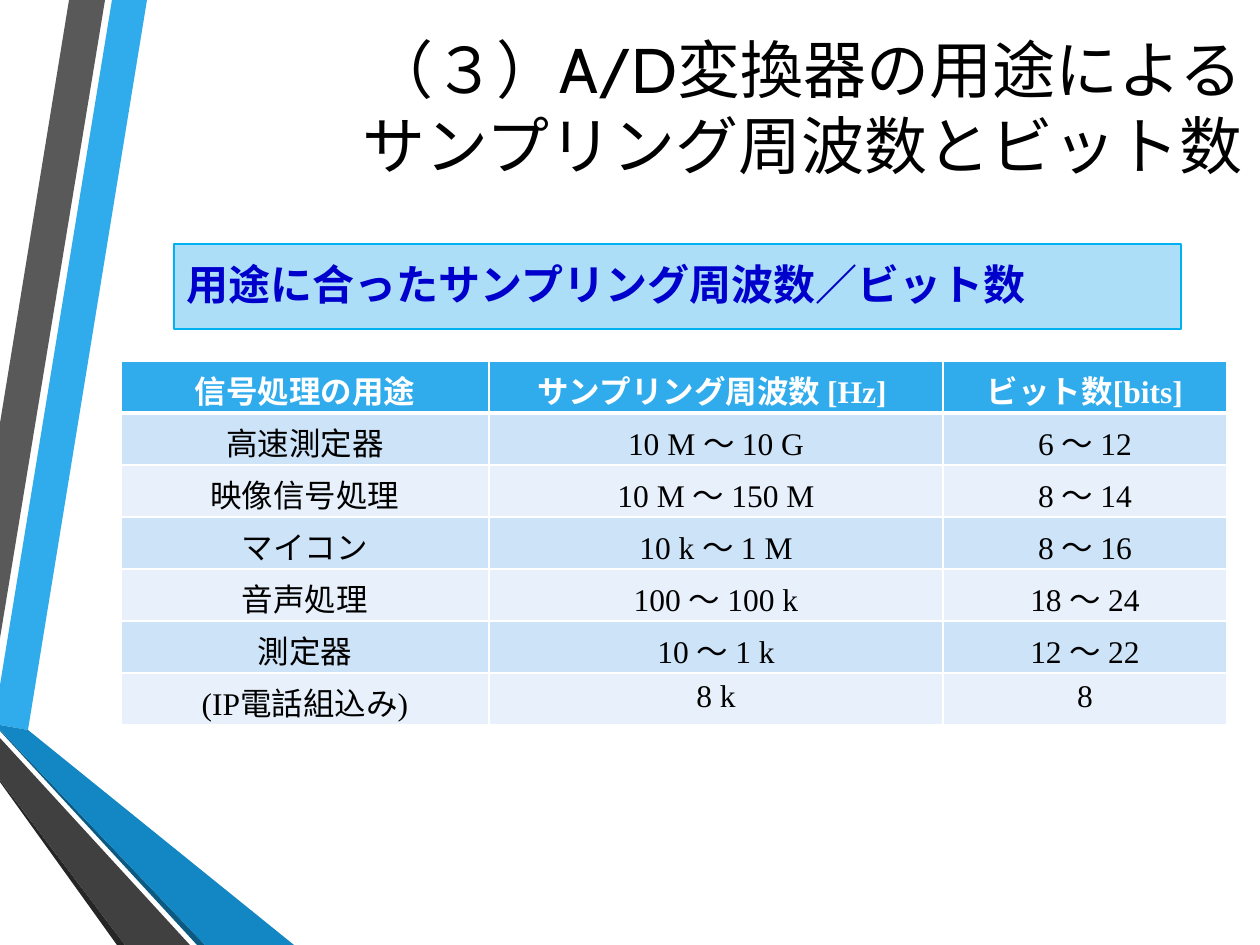
from dataclasses import dataclass

from lxml import etree
from pptx import Presentation
from pptx.dml.color import RGBColor
from pptx.enum.shapes import MSO_SHAPE
from pptx.enum.text import MSO_ANCHOR, PP_ALIGN
from pptx.oxml.ns import qn
from pptx.util import Emu, Pt

EMU_PER_PX = 914400 / 126
LEFT, CENTER, RIGHT = PP_ALIGN.LEFT, PP_ALIGN.CENTER, PP_ALIGN.RIGHT
TOP, MIDDLE = MSO_ANCHOR.TOP, MSO_ANCHOR.MIDDLE
RECTANGLE = MSO_SHAPE.RECTANGLE


@dataclass(frozen=True)
class Theme:
    title_font: str = "Cabin"
    body_font: str = "Times New Roman"
    title_size: int = 36
    banner_size: int = 24
    table_size: int = 18
    text: str = "000000"
    white: str = "FFFFFF"
    banner_text: str = "0000CC"
    banner_fill: str = "ACDEF7"
    banner_line: str = "00B0F0"
    accent: str = "30ACEC"
    accent_dark: str = "1287C3"
    accent_shadow: str = "0C5A82"
    gray: str = "595959"
    gray_dark: str = "404040"
    gray_shadow: str = "262626"
    row_fills: tuple = ("CDE3F8", "E8F1FB")


def px(length):
    return Emu(round(length * EMU_PER_PX))


def paint(fill, color):
    fill.solid()
    fill.fore_color.rgb = RGBColor.from_string(color)


def set_borders(cell, color, widths):
    """Draw the cell borders; widths maps left, right, top, bottom (L R T B) to points."""
    properties = cell._tc.get_or_add_tcPr()
    for index, side in enumerate("LRTB"):
        line = etree.Element(qn(f"a:ln{side}"), w=str(Pt(widths[side])))
        fill = etree.SubElement(line, qn("a:solidFill"))
        etree.SubElement(fill, qn("a:srgbClr"), val=color)
        properties.insert(index, line)


class SlideBuilder:
    def __init__(self, slide, theme):
        self.slide = slide
        self.theme = theme

    def add_text(self, frame, lines, font, size, color, bold=False, align=LEFT):
        """Fill the first paragraph, one run per line, and return it."""
        paragraph = frame.paragraphs[0]
        paragraph.alignment = align
        for index, line in enumerate(lines):
            if index:
                paragraph.add_line_break()
            run = paragraph.add_run()
            run.text = line
            run.font.name = font
            run.font.size = Pt(size)
            run.font.bold = bold
            run.font.color.rgb = RGBColor.from_string(color)
        return paragraph

    def polygon(self, points, color):
        builder = self.slide.shapes.build_freeform(*points[0], scale=EMU_PER_PX)
        builder.add_line_segments(points[1:], close=True)
        shape = builder.convert_to_shape()
        shape.shadow.inherit = False
        paint(shape.fill, color)
        shape.line.fill.background()

    def title(self, box, lines):
        frame = self.slide.shapes.add_textbox(*map(px, box)).text_frame
        frame.word_wrap = True
        frame.vertical_anchor = MIDDLE
        theme = self.theme
        self.add_text(frame, lines, theme.title_font, theme.title_size,
                      theme.text, align=RIGHT)

    def banner(self, box, text):
        theme = self.theme
        shape = self.slide.shapes.add_shape(RECTANGLE, *map(px, box))
        shape.shadow.inherit = False
        paint(shape.fill, theme.banner_fill)
        paint(shape.line.fill, theme.banner_line)
        shape.line.width = Pt(0.75)
        frame = shape.text_frame
        frame.word_wrap = True
        frame.vertical_anchor = TOP
        paragraph = self.add_text(frame, [text], theme.body_font,
                                  theme.banner_size, theme.banner_text, bold=True)
        paragraph.line_spacing = Pt(33.6)
        paragraph.space_before = paragraph.space_after = Pt(6)

    def table(self, left, top, column_widths, row_height, rows):
        theme = self.theme
        table = self.slide.shapes.add_table(
            len(rows), len(column_widths), px(left), px(top),
            px(sum(column_widths)), px(row_height * len(rows))).table
        for column, width in zip(table.columns, column_widths):
            column.width = px(width)
        for row_index, texts in enumerate(rows):
            header = row_index == 0
            fill = theme.accent if header else theme.row_fills[(row_index - 1) % 2]
            widths = {"L": 1, "R": 1, "T": 3 if row_index == 1 else 1,
                      "B": 3 if header else 1}
            table.rows[row_index].height = px(row_height)
            for column_index, text in enumerate(texts):
                cell = table.cell(row_index, column_index)
                paint(cell.fill, fill)
                set_borders(cell, theme.white, widths)
                self.add_text(cell.text_frame, [text], theme.body_font,
                              theme.table_size,
                              theme.white if header else theme.text,
                              bold=header, align=CENTER)


def main():
    presentation = Presentation()
    presentation.slide_width, presentation.slide_height = px(1260), px(945)
    theme = Theme()
    slide = presentation.slides.add_slide(presentation.slide_layouts[6])
    builder = SlideBuilder(slide, theme)

    ribbons = [
        (theme.accent, [(0, 685), (0, 725), (28, 730), (147, 0), (112, 0)]),
        (theme.gray, [(105, 0), (69, 0), (0, 423), (0, 638)]),
        (theme.gray_shadow, [(0, 780), (0, 782), (117, 945), (125, 945)]),
        (theme.accent_shadow, [(0, 730), (0, 731), (197, 945), (205, 945)]),
        (theme.accent_dark, [(0, 730), (205, 945), (294, 945), (28, 730), (0, 725)]),
        (theme.gray_dark, [(0, 780), (125, 945), (190, 945), (0, 738)]),
    ]
    for color, points in ribbons:
        builder.polygon(points, color)

    builder.title((193, 0, 1062, 213),
                  ["（３）A/D変換器の用途による", "サンプリング周波数とビット数"])
    builder.banner((174, 244, 1007, 85), "用途に合ったサンプリング周波数／ビット数")
    builder.table(121, 361, (368, 454, 284), 52, [
        ("信号処理の用途", "サンプリング周波数 [Hz] ", "ビット数[bits]"),
        ("高速測定器", "10 M ～ 10 G", "6 ～ 12"),
        ("映像信号処理", "10 M ～ 150 M", "8 ～ 14"),
        ("マイコン", "10 k ～ 1 M", "8 ～ 16"),
        ("音声処理", "100 ～ 100 k", "18 ～ 24"),
        ("測定器", "10 ～ 1 k", "12 ～ 22"),
        ("(IP電話組込み)", "8 k", "8"),
    ])
    presentation.save("out.pptx")


if __name__ == "__main__":
    main()
